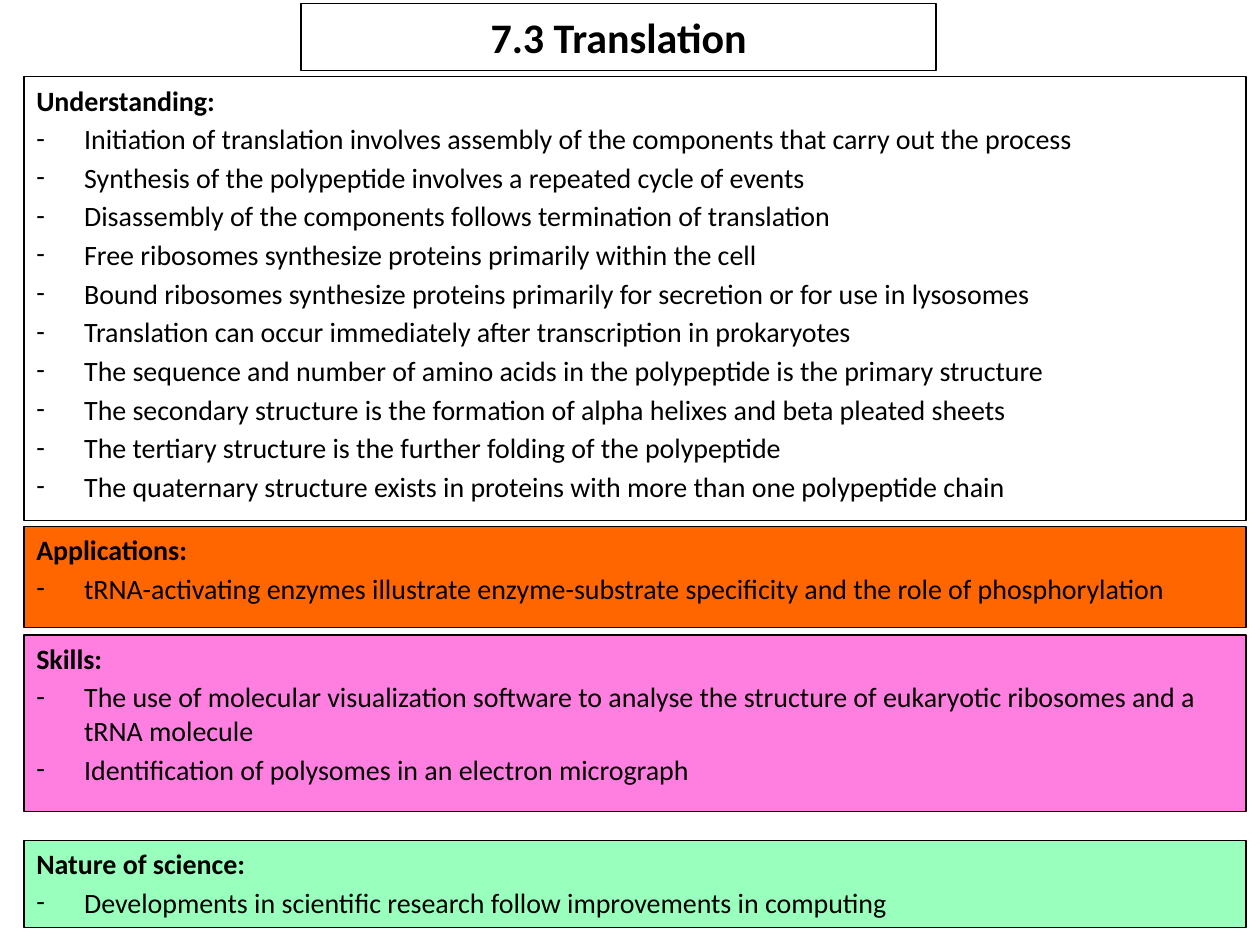
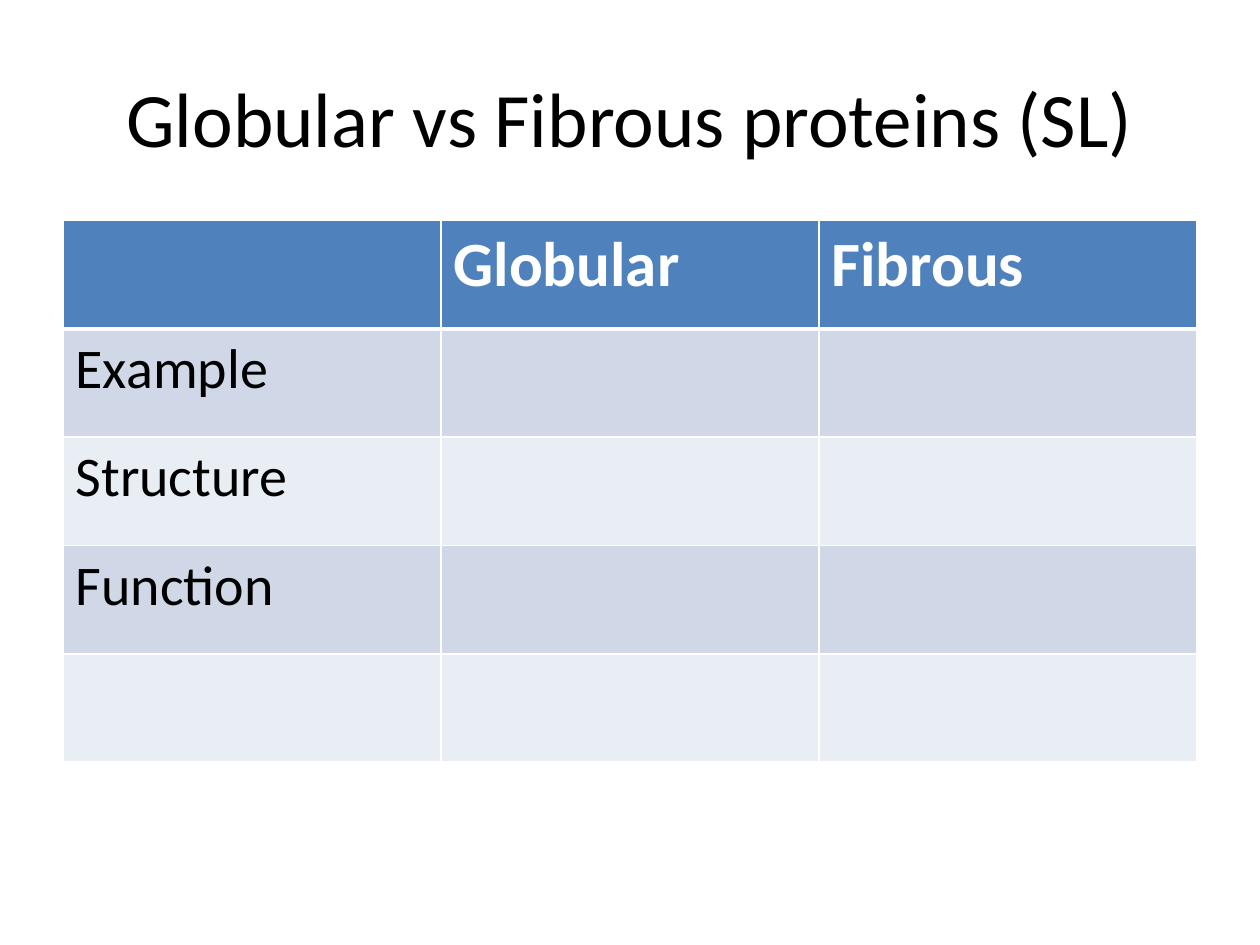
from lxml import etree
from pptx import Presentation
from pptx import util as u
from pptx.dml import color
from pptx.enum import shapes, text
from pptx.oxml import ns

FONT = "Calibri"
COLOURS = {
    "ink": "000000", "paper": "FFFFFF", "applications": "FF6600", "skills": "FF7FE1",
    "nature": "98FFBC", "header": "4F81BD", "band_dark": "D0D8E8", "band_light": "E9EDF4",
}
SECTIONS = [
    ("Understanding:", None, 0.61, 3.52, [
        "Initiation of translation involves assembly of the components that carry out the process",
        "Synthesis of the polypeptide involves a repeated cycle of events",
        "Disassembly of the components follows termination of translation",
        "Free ribosomes synthesize proteins primarily within the cell",
        "Bound ribosomes synthesize proteins primarily for secretion or for use in lysosomes",
        "Translation can occur immediately after transcription in prokaryotes",
        "The sequence and number of amino acids in the polypeptide is the primary structure",
        "The secondary structure is the formation of alpha helixes and beta pleated sheets",
        "The tertiary structure is the further folding of the polypeptide",
        "The quaternary structure exists in proteins with more than one polypeptide chain",
    ]),
    ("Applications:", "applications", 4.18, 0.8, [
        "tRNA-activating enzymes illustrate enzyme-substrate specificity and the role of "
        "phosphorylation",
    ]),
    ("Skills:", "skills", 5.04, 1.4, [
        "The use of molecular visualization software to analyse the structure of eukaryotic "
        "ribosomes and a tRNA molecule",
        "Identification of polysomes in an electron micrograph",
    ]),
    ("Nature of science:", "nature", 6.67, 0.69, [
        "Developments in scientific research follow improvements in computing",
    ]),
]
PROTEIN_ROWS = [
    ("", "Globular", "Fibrous"),
    ("Example", "", ""),
    ("Structure", "", ""),
    ("Function", "", ""),
    ("", "", ""),
]


def rgb(name):
    """Return the named palette colour."""
    return color.RGBColor.from_string(COLOURS[name])


def style(paragraph, size, bold=False, ink="ink"):
    """Format every run of a paragraph."""
    for run in paragraph.runs:
        run.font.name = FONT
        run.font.size = u.Pt(size)
        run.font.bold = bold
        run.font.color.rgb = rgb(ink)


def add_panel(slide, box, fill=None, outlined=True):
    """Add a rectangle with an optional fill and outline and return its text frame."""
    panel = slide.shapes.add_shape(shapes.MSO_SHAPE.RECTANGLE, *map(u.Inches, box))
    panel.shadow.inherit = False
    if fill:
        panel.fill.solid()
        panel.fill.fore_color.rgb = rgb(fill)
    else:
        panel.fill.background()
    if outlined:
        panel.line.color.rgb = rgb("ink")
        panel.line.width = u.Pt(0.75)
    else:
        panel.line.fill.background()
    panel.text_frame.word_wrap = True
    return panel.text_frame


def add_title(slide, box, wording, size, bold=False, outlined=False):
    """Add a centred slide title."""
    frame = add_panel(slide, box, outlined=outlined)
    frame.vertical_anchor = text.MSO_ANCHOR.MIDDLE
    frame.text = wording
    frame.paragraphs[0].alignment = text.PP_ALIGN.CENTER
    style(frame.paragraphs[0], size, bold)


def add_dash(paragraph):
    """Give a paragraph a hanging dash bullet."""
    properties = paragraph._p.get_or_add_pPr()
    properties.set("marL", str(u.Inches(0.38)))
    properties.set("indent", str(-u.Inches(0.38)))
    etree.SubElement(properties, ns.qn("a:buFont"), typeface=FONT)
    etree.SubElement(properties, ns.qn("a:buChar"), char="-")


def add_section(slide, box, heading, points, fill):
    """Add a syllabus section with a bold heading and dashed points."""
    frame = add_panel(slide, box, fill)
    frame.vertical_anchor = text.MSO_ANCHOR.TOP
    frame.text = "\n".join([heading, *points])
    for index, paragraph in enumerate(frame.paragraphs):
        paragraph.alignment = text.PP_ALIGN.LEFT
        paragraph.space_before = u.Pt(2.9)
        style(paragraph, 16, bold=index == 0)
        if index:
            add_dash(paragraph)


def add_borders(cell, bottom_width):
    """Draw white borders round a table cell."""
    properties = cell._tc.get_or_add_tcPr()
    widths = {"lnL": 1, "lnR": 1, "lnT": 1, "lnB": bottom_width}
    for position, (side, width) in enumerate(widths.items()):
        border = etree.Element(ns.qn(f"a:{side}"), w=str(u.Pt(width)))
        solid = etree.SubElement(border, ns.qn("a:solidFill"))
        etree.SubElement(solid, ns.qn("a:srgbClr"), val=COLOURS["paper"])
        properties.insert(position, border)


def add_protein_table(slide, box, rows):
    """Add the comparison table with a header row and alternating bands."""
    frame = slide.shapes.add_table(len(rows), len(rows[0]), *map(u.Inches, box))
    for row, entries in enumerate(rows):
        header = row == 0
        band = "header" if header else "band_dark" if row % 2 else "band_light"
        for column, entry in enumerate(entries):
            cell = frame.table.cell(row, column)
            cell.fill.solid()
            cell.fill.fore_color.rgb = rgb(band)
            add_borders(cell, 3 if header else 1)
            if entry:
                cell.text = entry
                style(cell.text_frame.paragraphs[0], 36 if header else 32, header,
                      "paper" if header else "ink")


def build_syllabus(slide):
    """Build the topic overview slide."""
    add_title(slide, (2.39, 0.03, 5.04, 0.53), "7.3 Translation", 24, bold=True, outlined=True)
    for heading, fill, top, height, points in SECTIONS:
        add_section(slide, (0.19, top, 9.7, height), heading, points, fill)


def build_comparison(slide):
    """Build the protein comparison slide."""
    add_title(slide, (0.5, 0.3, 9, 1.25), "Globular vs Fibrous proteins (SL)", 44)
    add_protein_table(slide, (0.5, 1.75, 9, 4.3), PROTEIN_ROWS)


def main():
    """Build and save the presentation."""
    deck = Presentation()
    deck.slide_width = u.Inches(10)
    deck.slide_height = u.Inches(7.5)
    for build in (build_syllabus, build_comparison):
        build(deck.slides.add_slide(deck.slide_layouts[6]))
    deck.save("out.pptx")


if __name__ == "__main__":
    main()
